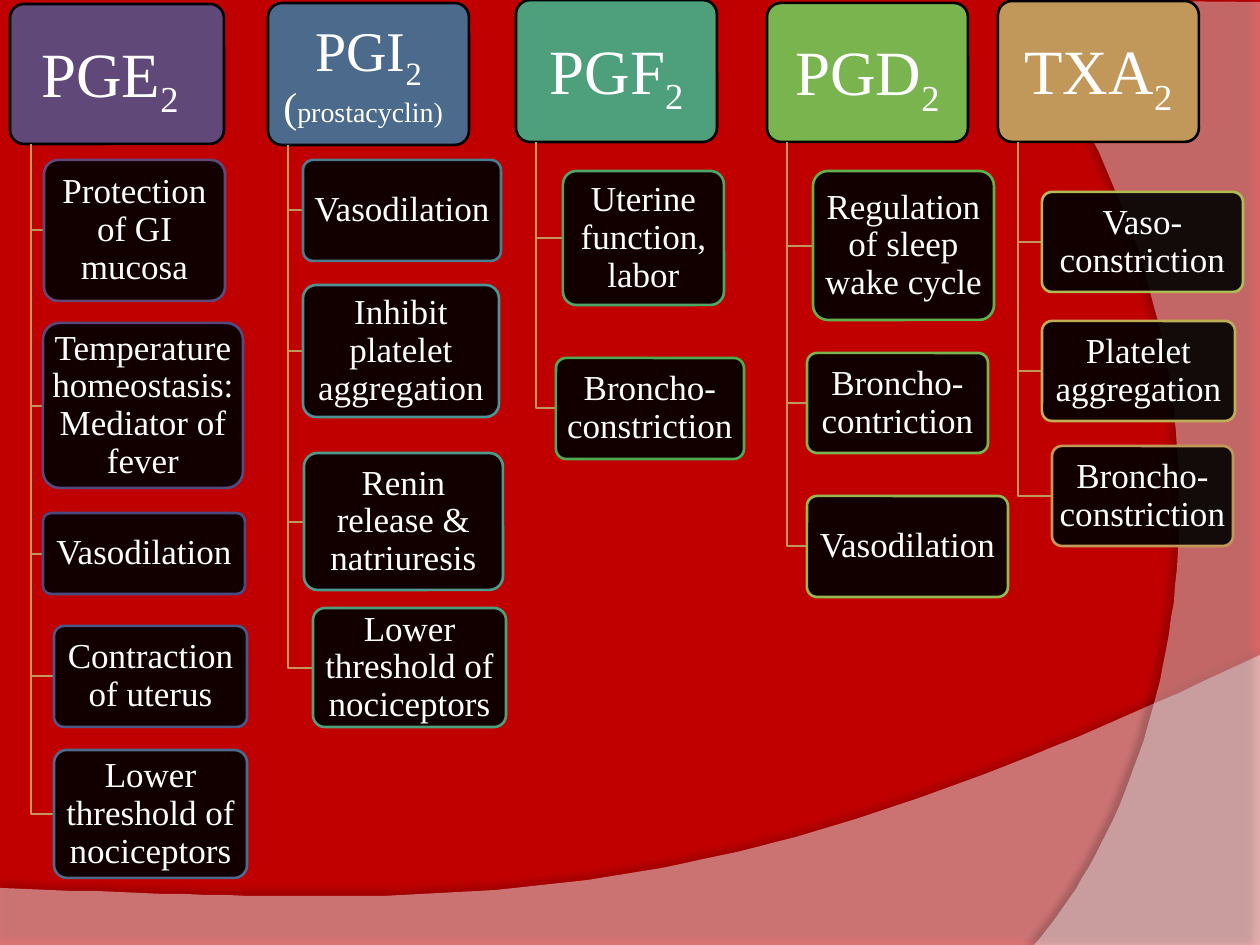
from lxml.etree import SubElement
from pptx import Presentation
from pptx.dml.color import RGBColor
from pptx.enum.shapes import MSO_SHAPE
from pptx.enum.text import MSO_ANCHOR, PP_ALIGN
from pptx.oxml.ns import qn
from pptx.util import Pt

PX = 914400 / 126
W, H = 1260, 945
FONT = "Times New Roman"
COLORS = {
    "background": "C00000",
    "wave": "FFFFFF",
    "shadow": "000000",
    "box": "000000",
    "outline": "000000",
    "text": "FFFFFF",
    "connector": "C19859",
    "PGE": "604878",
    "PGI": "4B6A8C",
    "PGF": "4DA07B",
    "PGD": "7AB44F",
    "TXA": "C19859",
    "PGE effects": ["604878", "56497D", "4A4A82", "4A5887", "4B6A8C"],
    "PGI effects": ["4B7D91", "4C9396", "4C9B8B", "4DA07B"],
    "PGF effects": ["4DA668", "4DAB53"],
    "PGD effects": ["5FB14D", "7AB44F", "95B851"],
    "TXA effects": ["B1BB54", "BEAE56", "C19859"],
}
COLUMNS = [
    ("PGE", (10, 4, 214, 140), [[("PGE", 36), ("2", 36, -25), (" ", 32)]], [
        ("Protection of GI mucosa", (34, 156, 181, 141)),
        ("Temperature homeostasis: Mediator of fever", (33, 319, 200, 165)),
        ("Vasodilation", (33, 509, 202, 81)),
        ("Contraction of uterus", (44, 622, 193, 101)),
        ("Lower threshold of nociceptors", (44, 746, 193, 128)),
    ]),
    ("PGI", (268, 3, 201, 142),
     [[("PGI", 32), ("2", 32, -25)], [("(", 24), ("prostacyclin)", 16), (" ", 24)]], [
        ("Vasodilation", (35, 157, 198, 101)),
        ("Inhibit platelet aggregation", (35, 282, 196, 132)),
        ("Renin release & natriuresis", (36, 450, 199, 137)),
        ("Lower threshold of nociceptors", (45, 605, 193, 119)),
    ]),
    ("PGF", (516, 0, 201, 142), [[("PGF", 36), ("2", 36, -25)]], [
        ("Uterine function, labor", (47, 171, 161, 134)),
        ("Broncho-constriction", (40, 358, 188, 101)),
    ]),
    ("PGD", (767, 3, 201, 139), [[("PGD", 36), ("2", 36, -25)]], [
        ("Regulation of sleep wake cycle", (46, 168, 181, 149)),
        ("Broncho-contriction", (40, 350, 181, 100)),
        ("Vasodilation", (40, 493, 201, 101)),
    ]),
    ("TXA", (998, 1, 201, 141), [[("TXA", 36), ("2", 36, -25)]], [
        ("Vaso-constriction", (44, 191, 201, 100)),
        ("Platelet aggregation", (44, 320, 193, 100)),
        ("Broncho-constriction", (54, 445, 181, 100)),
    ]),
]


def px(n):
    return round(n * PX)


def rgb(color):
    return RGBColor.from_string(color)


def set_fill(sp, color, alpha=100):
    sp.fill.solid()
    sp.fill.fore_color.rgb = rgb(color)
    if alpha < 100:
        clr = sp.fill._xPr.find(qn("a:solidFill"))[0]
        SubElement(clr, qn("a:alpha"), val=str(alpha * 1000))


def set_line(sp, color):
    sp.line.color.rgb = rgb(color)
    sp.line.width = Pt(1.5)


def add_run(p, text, size=20, baseline=0, color=COLORS["text"]):
    r = p.add_run()
    r.text = text
    r.font.name = FONT
    r.font.size = Pt(size)
    r.font.color.rgb = rgb(color)
    if baseline:
        r._r.get_or_add_rPr().set("baseline", str(baseline * 1000))


def add_box(slide, box, paragraphs, fill, line, alpha=100, inset=2):
    sp = slide.shapes.add_shape(MSO_SHAPE.ROUNDED_RECTANGLE, *map(px, box))
    sp.shadow.inherit = False
    sp.adjustments[0] = 0.1
    set_fill(sp, fill, alpha)
    set_line(sp, line)
    tf = sp.text_frame
    tf.word_wrap = True
    tf.vertical_anchor = MSO_ANCHOR.MIDDLE
    tf.margin_left = tf.margin_right = px(inset)
    tf.margin_top = tf.margin_bottom = px(4)
    for i, runs in enumerate(paragraphs):
        p = tf.add_paragraph() if i else tf.paragraphs[0]
        p.alignment = PP_ALIGN.CENTER
        p.line_spacing = 0.9
        for run in runs:
            add_run(p, *run)


def add_path(slide, points, close):
    builder = slide.shapes.build_freeform(*points[0], scale=PX)
    builder.add_line_segments(points[1:], close=close)
    sp = builder.convert_to_shape()
    sp.shadow.inherit = False
    return sp


def add_elbow(slide, x, top, end_x, end_y):
    sp = add_path(slide, [(x, top), (x, end_y), (end_x, end_y)], close=False)
    sp.fill.background()
    set_line(sp, COLORS["connector"])


def bezier(p0, p1, p2, p3, steps=60):
    def at(t):
        u = 1 - t
        return tuple(u**3 * a + 3 * u * u * t * b + 3 * u * t * t * c + t**3 * d
                     for a, b, c, d in zip(p0, p1, p2, p3))
    return [at(i / steps) for i in range(steps + 1)]


def add_wave(slide, points, alpha, shadow_alpha, distance, direction):
    sp = add_path(slide, points, close=True)
    set_fill(sp, COLORS["wave"], alpha)
    sp.line.fill.background()
    effects = sp._element.spPr.find(qn("a:effectLst"))
    shadow = SubElement(effects, qn("a:outerShdw"), blurRad=str(Pt(4)),
                        dist=str(Pt(distance)), dir=str(direction * 60000),
                        algn="ctr", rotWithShape="0")
    clr = SubElement(shadow, qn("a:srgbClr"), val=COLORS["shadow"])
    SubElement(clr, qn("a:alpha"), val=str(shadow_alpha * 1000))


def add_background(slide):
    set_fill(slide.background, COLORS["background"])
    bottom = bezier((W, 655), (704, 919), (493, 906), (0, 888))
    add_wave(slide, [(0, H + 1), (W, H + 1)] + bottom, 45, 35, 3.5, 270)
    right = bezier((1034, H), (1178, 780), (1283, 378), (1008, 0))
    add_wave(slide, [(W, 2), (W, H)] + right, 40, 45, 4, 180)


def add_column(slide, name, box, heading, effects):
    x, y, w, h = box
    add_box(slide, box, heading, COLORS[name], COLORS["outline"], inset=6)
    for (text, (dx, dy, bw, bh)), line in zip(effects, COLORS[f"{name} effects"]):
        left, top = x + dx, y + dy
        add_elbow(slide, x + w / 10, y + h, left, top + bh / 2)
        add_box(slide, (left, top, bw, bh), [[(text,)]], COLORS["box"], line, alpha=90)


def main():
    prs = Presentation()
    prs.slide_width, prs.slide_height = px(W), px(H)
    slide = prs.slides.add_slide(prs.slide_layouts[6])
    add_background(slide)
    for column in COLUMNS:
        add_column(slide, *column)
    prs.save("out.pptx")


if __name__ == "__main__":
    main()
